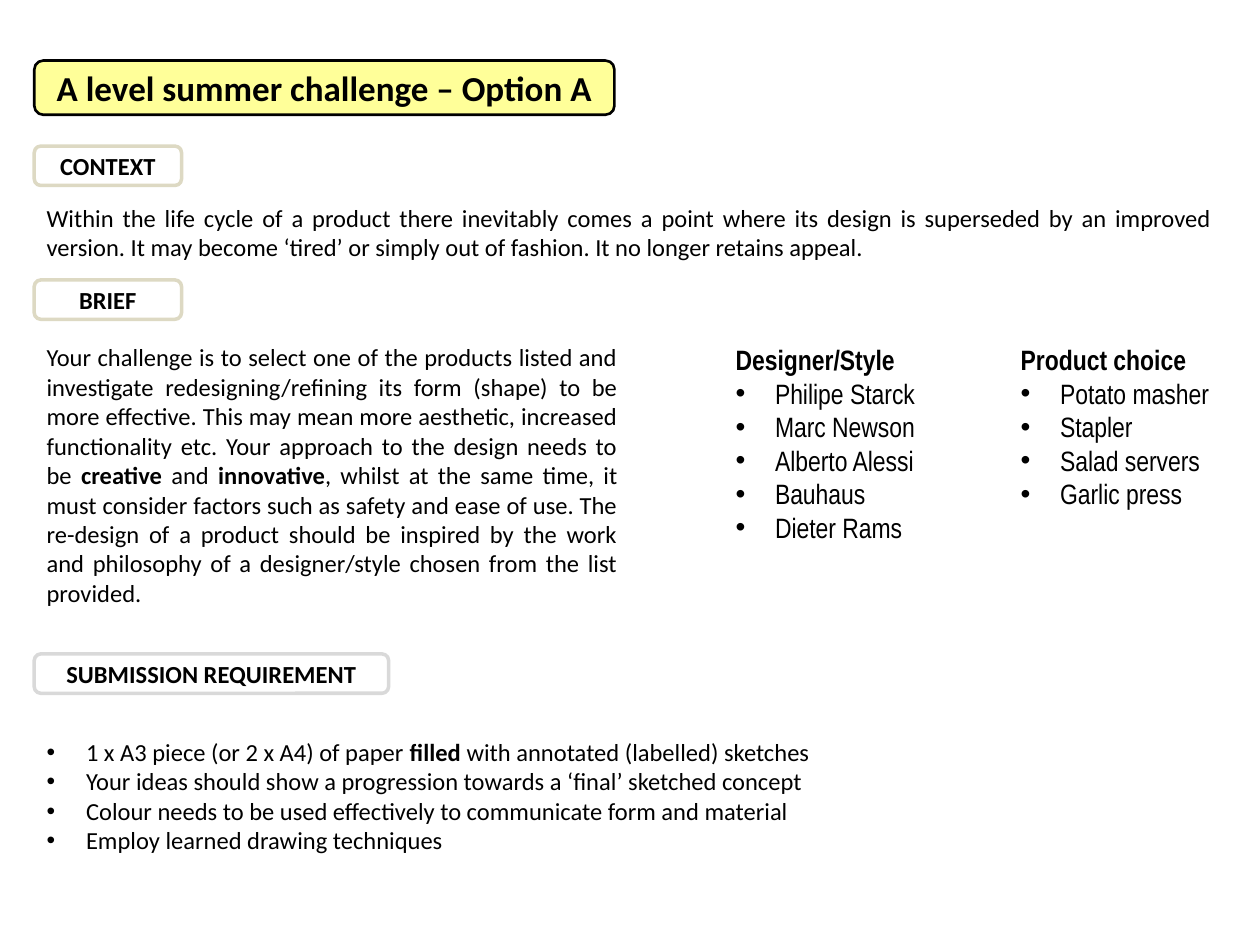
from pptx import Presentation
from pptx.dml.color import RGBColor
from pptx.enum.shapes import MSO_SHAPE as Shape
from pptx.enum.text import MSO_ANCHOR as Anchor, MSO_AUTO_SIZE as AutoSize, PP_ALIGN as Align
from pptx.oxml.ns import qn
from pptx.util import Pt
from lxml.etree import SubElement

COLORS = {"ink": "000000", "title": "FFFF99", "sand": "DDD9C3", "grey": "D9D9D9"}
LEFT = 19.6
INDENT = 22.5
HEADINGS = [
    ("CONTEXT", (LEFT, 83.5, 84.2, 22.5), "sand"),
    ("BRIEF", (LEFT, 160, 84.2, 22.5), "sand"),
    ("SUBMISSION REQUIREMENT", (LEFT, 373.7, 202.5, 22.5), "grey"),
]
CONTEXT = [
    ("Within the life cycle of a product there inevitably comes a point where its design "
     "is superseded by an improved version. It may become ‘tired’ or simply out of fashion. "
     "It no longer retains appeal.", False),
]
BRIEF = [
    ("Your challenge is to select one of the products listed and investigate "
     "redesigning/refining its form (shape) to be more effective. This may mean more "
     "aesthetic, increased functionality etc. Your approach to the design needs to be ", False),
    ("creative", True),
    (" and ", False),
    ("innovative", True),
    (", whilst at the same time, it must consider factors such as safety and ease of use. "
     "The re-design of a product should be inspired by the work and philosophy of a "
     "designer/style chosen from the list provided.", False),
]
REQUIREMENTS = [
    [("1 x A3 piece (or 2 x A4) of paper ", False), ("filled", True),
     (" with annotated (labelled) sketches", False)],
    [("Your ideas should show a progression towards a ‘final’ sketched concept", False)],
    [("Colour needs to be used effectively to communicate form and material", False)],
    [("Employ learned drawing techniques", False)],
]
CHOICES = [
    ("Designer/Style", (413.3, 192.2, 128.2, 123.8),
     ["Philipe Starck", "Marc Newson", "Alberto Alessi", "Bauhaus", "Dieter Rams"]),
    ("Product choice", (576.2, 192.2, 124.6, 104.4),
     ["Potato masher", "Stapler", "Salad servers", "Garlic press"]),
]


def color(name):
    """Return the named colour."""
    return RGBColor.from_string(COLORS[name])


def add_spans(para, spans, size=14, font="Calibri"):
    """Add (text, bold) spans to a paragraph."""
    for text, bold in spans:
        span = para.add_run()
        span.text = text
        span.font.size = Pt(size)
        span.font.name = font
        span.font.bold = bold
        span.font.color.rgb = color("ink")


def add_bullet(para):
    """Give a paragraph a hanging round bullet."""
    props = para._p.get_or_add_pPr()
    props.set("marL", str(Pt(INDENT)))
    props.set("indent", str(-Pt(INDENT)))
    SubElement(props, qn("a:buFont"), typeface="Arial")
    SubElement(props, qn("a:buChar"), char="•")


def add_label(page, box, text, line, width=2, size=14, fill=None):
    """Draw a rounded, outlined label with bold centred text."""
    label = page.shapes.add_shape(Shape.ROUNDED_RECTANGLE, *map(Pt, box))
    label.shadow.inherit = False
    if fill:
        label.fill.solid()
        label.fill.fore_color.rgb = color(fill)
    else:
        label.fill.background()
    label.line.color.rgb = color(line)
    label.line.width = Pt(width)
    frame = label.text_frame
    frame.word_wrap = True
    frame.vertical_anchor = Anchor.MIDDLE
    para = frame.paragraphs[0]
    para.alignment = Align.CENTER
    add_spans(para, [(text, True)], size)


def add_text_frame(page, box):
    """Add a wrapping text box that fits its text and return its frame."""
    frame = page.shapes.add_textbox(*map(Pt, box)).text_frame
    frame.word_wrap = True
    frame.auto_size = AutoSize.SHAPE_TO_FIT_TEXT
    return frame


def add_prose(page, box, spans):
    """Place one justified paragraph."""
    para = add_text_frame(page, box).paragraphs[0]
    para.alignment = Align.JUSTIFY
    add_spans(para, spans)


def add_list(page, box, items, heading=None, **style):
    """Place a bulleted list under an optional bold heading."""
    frame = add_text_frame(page, box)
    rows = [([(heading, True)], False)] if heading else []
    rows += [(spans, True) for spans in items]
    for index, (spans, bulleted) in enumerate(rows):
        para = frame.add_paragraph() if index else frame.paragraphs[0]
        if bulleted:
            add_bullet(para)
        add_spans(para, spans, **style)


def build_page(page):
    """Place every region of the challenge sheet."""
    add_label(page, (LEFT, 34.6, 331.5, 31), "A level summer challenge – Option A",
              "ink", width=1.5, size=20, fill="title")
    for text, box, line in HEADINGS:
        add_label(page, box, text, line)
    add_prose(page, (LEFT, 112.3, 680.4, 41), CONTEXT)
    add_prose(page, (LEFT, 192.2, 340.5, 160), BRIEF)
    add_list(page, (LEFT, 417.6, 632, 75), REQUIREMENTS)
    for heading, box, names in CHOICES:
        add_list(page, box, [[(name, False)] for name in names], heading,
                 size=16, font="Arial Narrow")


def main():
    """Build and save the deck."""
    deck = Presentation()
    deck.slide_width, deck.slide_height = Pt(720), Pt(540)
    build_page(deck.slides.add_slide(deck.slide_layouts[6]))
    deck.save("out.pptx")


if __name__ == "__main__":
    main()
